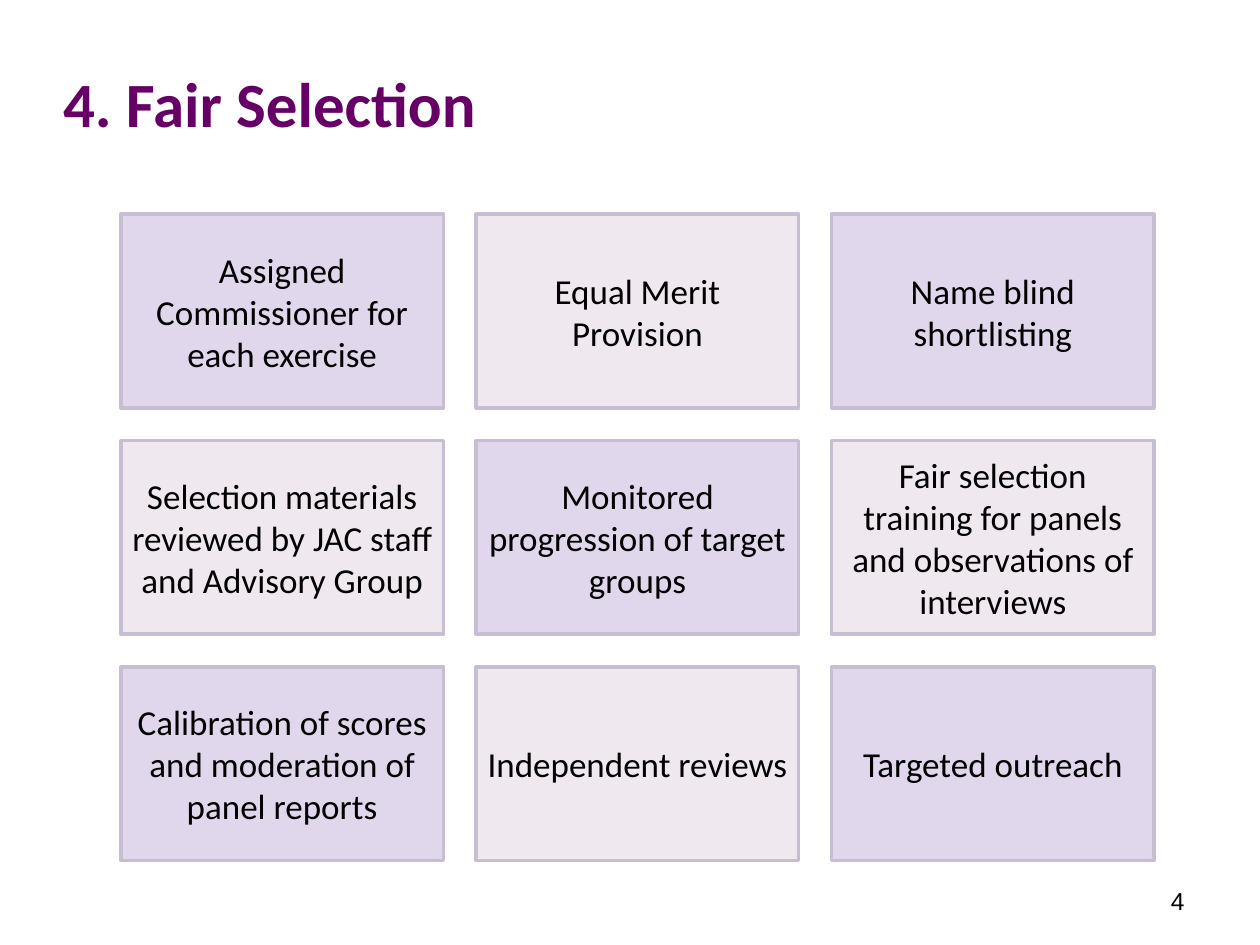
from pptx import Presentation
from pptx.dml.color import RGBColor
from pptx.enum.shapes import MSO_SHAPE
from pptx.enum.text import MSO_ANCHOR, MSO_AUTO_SIZE, PP_ALIGN
from pptx.util import Inches, Pt

RECTANGLE = MSO_SHAPE.RECTANGLE
MIDDLE = MSO_ANCHOR.MIDDLE
NO_FIT = MSO_AUTO_SIZE.NONE
LEFT, CENTER, RIGHT = PP_ALIGN.LEFT, PP_ALIGN.CENTER, PP_ALIGN.RIGHT

PURPLE = RGBColor(0x66, 0x00, 0x66)
BLACK = RGBColor(0x00, 0x00, 0x00)
LILAC = RGBColor(0xE0, 0xD7, 0xED)
PALE = RGBColor(0xEF, 0xE9, 0xEF)
BORDER = RGBColor(0xC7, 0xBE, 0xD4)

MEASURES = [
    ["Assigned Commissioner for each exercise",
     "Equal Merit Provision",
     "Name blind shortlisting"],
    ["Selection materials reviewed by JAC staff and Advisory Group",
     "Monitored progression of target groups",
     "Fair selection training for panels and observations of interviews"],
    ["Calibration of scores and moderation of panel reports",
     "Independent reviews",
     "Targeted outreach"],
]


def write(holder, text, size, font="Calibri", color=BLACK, bold=False,
          align=LEFT, inset=None):
    frame = holder.text_frame
    frame.word_wrap = True
    frame.auto_size = NO_FIT
    frame.vertical_anchor = MIDDLE
    if inset is not None:
        frame.margin_left = frame.margin_right = inset
        frame.margin_top = frame.margin_bottom = inset
    paragraph = frame.paragraphs[0]
    paragraph.alignment = align
    run = paragraph.add_run()
    run.text = text
    run.font.name = font
    run.font.size = Pt(size)
    run.font.bold = bold
    run.font.color.rgb = color


def place_title(slide, left, top, width, height):
    title = slide.shapes.title
    title.left, title.top, title.width, title.height = left, top, width, height
    write(title, "4. Fair Selection", 36, color=PURPLE, bold=True)


def place_page_number(slide, left, top, width, height):
    page_number = slide.shapes.add_textbox(left, top, width, height)
    write(page_number, "4", 14, font="Arial", align=RIGHT)


def place_measures(slide, left, top, width, height):
    gap = Inches(0.26)
    rows, columns = len(MEASURES), len(MEASURES[0])
    card_width = (width - gap * (columns - 1)) // columns
    card_height = (height - gap * (rows - 1)) // rows
    for row, labels in enumerate(MEASURES):
        for column, label in enumerate(labels):
            card = slide.shapes.add_shape(
                RECTANGLE,
                left + column * (card_width + gap),
                top + row * (card_height + gap),
                card_width, card_height)
            card.shadow.inherit = False
            # Fills alternate like a chessboard
            card.fill.solid()
            card.fill.fore_color.rgb = PALE if (row + column) % 2 else LILAC
            card.line.color.rgb = BORDER
            card.line.width = Pt(2)
            write(card, label, 20, align=CENTER, inset=Inches(0.08))


def main():
    prs = Presentation()
    prs.slide_width, prs.slide_height = Inches(10), Inches(7.5)
    slide = prs.slides.add_slide(prs.slide_layouts[5])

    # Heading
    place_title(slide, Inches(0.4), Inches(0.39), Inches(9.26), Inches(0.85))
    # Page number
    place_page_number(slide, Inches(7.17), Inches(6.95), Inches(2.33), Inches(0.4))
    # Grid of measures
    place_measures(slide, Inches(0.96), Inches(1.7), Inches(8.2), Inches(5.13))

    prs.save("out.pptx")


if __name__ == "__main__":
    main()
